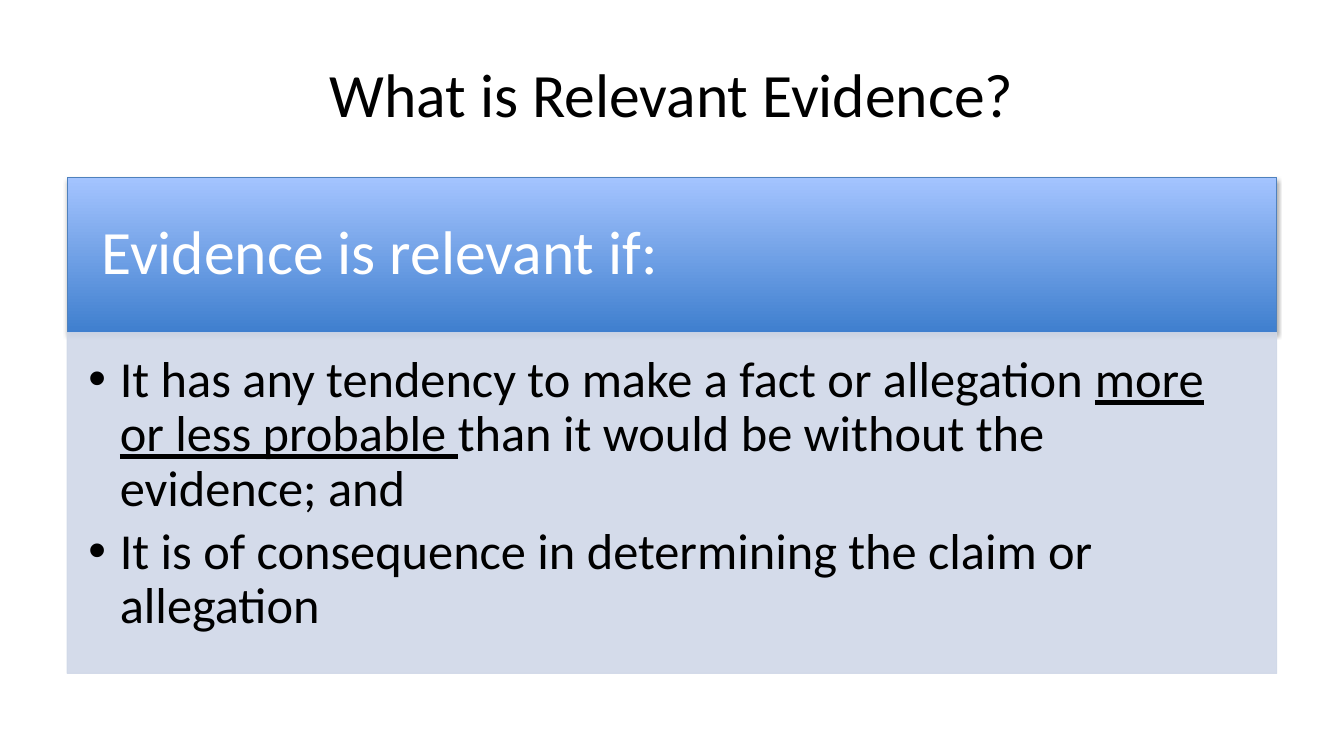
from lxml.etree import SubElement
from pptx import Presentation
from pptx.dml.color import RGBColor
from pptx.enum.shapes import MSO_SHAPE
from pptx.enum.text import MSO_ANCHOR as ANCHOR, PP_ALIGN as ALIGN
from pptx.oxml.ns import qn
from pptx.util import Pt

FONT = "Calibri"
LEFT, WIDTH = 48, 864
HEADER_TOP, HEADER_HEIGHT = 126.7, 110.9
BODY_TOP, BODY_HEIGHT = HEADER_TOP + HEADER_HEIGHT, 243.4
BODY_COLOR = "D0D8E8"


def color(value):
    return RGBColor.from_string(value)


def add_alpha(color_parent, percent):
    for element in list(color_parent.iter(qn("a:srgbClr"))):
        SubElement(element, qn("a:alpha"), val=str(percent * 1000))


def add_panel(slide, top, height, line):
    shape = slide.shapes.add_shape(
        MSO_SHAPE.RECTANGLE, Pt(LEFT), Pt(top), Pt(WIDTH), Pt(height))
    shape.shadow.inherit = False
    shape.line.color.rgb = color(line)
    shape.line.width = Pt(0.75)
    return shape


def fill_gradient(shape, stops, angle):
    shape.fill.gradient()
    shape.fill.gradient_angle = angle
    for stop, value in zip(shape.fill.gradient_stops, stops):
        stop.color.rgb = color(value)


def add_shadow(shape, blur, distance, opacity):
    effects = shape._element.spPr.find(qn("a:effectLst"))
    shadow = SubElement(
        effects, qn("a:outerShdw"), blurRad=str(Pt(blur)),
        dist=str(Pt(distance)), dir=str(90 * 60000), rotWithShape="0")
    SubElement(shadow, qn("a:srgbClr"), val="000000")
    add_alpha(shadow, opacity)


def add_bullet(paragraph, indent):
    properties = paragraph._p.get_or_add_pPr()
    properties.set("marL", str(Pt(indent)))
    properties.set("indent", str(-Pt(indent)))
    SubElement(properties, qn("a:buFont"), typeface="Arial")
    SubElement(properties, qn("a:buChar"), char="•")


def add_text(slide, top, height, paragraphs, *, size, ink="000000",
             anchor=ANCHOR.MIDDLE, align=ALIGN.LEFT, insets=(7.2, 3.6, 7.2, 3.6),
             spacing=1.0, gap=0, bullet_indent=None):
    """Each paragraph is a list of (text, underlined) pairs."""
    box = slide.shapes.add_textbox(Pt(LEFT), Pt(top), Pt(WIDTH), Pt(height))
    frame = box.text_frame
    frame.word_wrap = True
    frame.vertical_anchor = anchor
    (frame.margin_left, frame.margin_top,
     frame.margin_right, frame.margin_bottom) = map(Pt, insets)
    for index, runs in enumerate(paragraphs):
        paragraph = frame.add_paragraph() if index else frame.paragraphs[0]
        if bullet_indent:
            add_bullet(paragraph, bullet_indent)
        paragraph.alignment = align
        paragraph.line_spacing = spacing
        paragraph.space_after = Pt(gap)
        for text, underlined in runs:
            run = paragraph.add_run()
            run.text = text
            run.font.name = FONT
            run.font.size = Pt(size)
            run.font.underline = underlined
            run.font.color.rgb = color(ink)


def main():
    presentation = Presentation()
    presentation.slide_width, presentation.slide_height = Pt(960), Pt(540)
    slide = presentation.slides.add_slide(presentation.slide_layouts[6])

    # Title
    add_text(slide, 21.6, 90, [[("What is Relevant Evidence?", False)]],
             size=44, align=ALIGN.CENTER)

    # Header band
    header = add_panel(slide, HEADER_TOP, HEADER_HEIGHT, "4F81BD")
    fill_gradient(header, ("3F7FCE", "A4C4FF"), 90)
    add_shadow(header, blur=3.1, distance=1.8, opacity=35)
    add_text(slide, HEADER_TOP, HEADER_HEIGHT,
             [[("Evidence is relevant if:", False)]], size=44, ink="FFFFFF",
             insets=(24.5, 14.4, 24.5, 14.4), spacing=0.9)

    # Conditions
    body = add_panel(slide, BODY_TOP, BODY_HEIGHT, BODY_COLOR)
    body.fill.solid()
    body.fill.fore_color.rgb = color(BODY_COLOR)
    add_alpha(body._element.spPr, 90)
    conditions = [
        [("It has any tendency to make a fact or allegation ", False),
         ("more or less probable ", True),
         ("than it would be without the evidence; and", False)],
        [("It is of consequence in determining the claim or allegation", False)],
    ]
    add_text(slide, BODY_TOP, BODY_HEIGHT, conditions, size=36,
             anchor=ANCHOR.TOP, insets=(15.1, 15.1, 20.2, 23), spacing=0.9,
             gap=6, bullet_indent=22.5)

    presentation.save("out.pptx")


if __name__ == "__main__":
    main()
